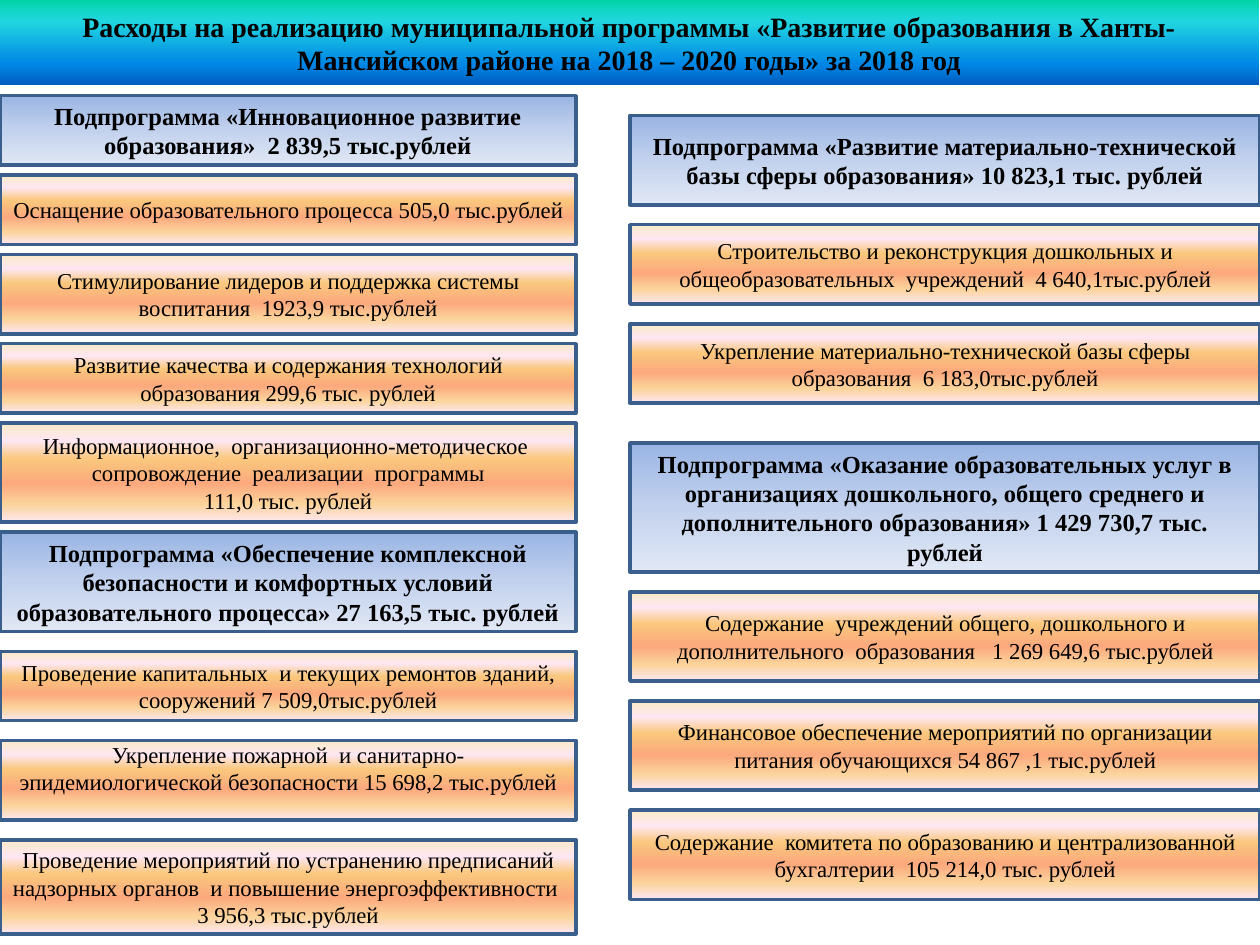
from copy import deepcopy

from pptx import Presentation
from pptx.dml.color import RGBColor
from pptx.enum.shapes import MSO_SHAPE
from pptx.enum.text import MSO_ANCHOR, PP_ALIGN
from pptx.oxml.ns import qn
from pptx.util import Cm, Pt

BLACK = RGBColor(0x00, 0x00, 0x00)
BORDER = RGBColor(0x3A, 0x5F, 0x8C)


def stops(*pairs):
    return [(place, RGBColor.from_string(color)) for place, color in pairs]


TITLE_STOPS = stops((0, "03D4A8"), (25, "21D6E0"), (75, "0087E6"), (100, "005CBF"))
PROGRAM_STOPS = stops((0, "9AB5E4"), (50, "C2D1ED"), (100, "E1E8F5"))
EXPENSE_STOPS = stops((0, "FBEAC7"), (18, "FEE7F2"), (36, "FAC77D"),
                      (61, "FBA97D"), (82, "FBD49C"), (100, "FEE7F2"))

FONT = {"name": "Times New Roman", "bold": False}
TITLE_FONT = {**FONT, "size": Pt(16), "bold": True}
PROGRAM_FONT = {**FONT, "size": Pt(14), "bold": True}
EXPENSE_FONT = {**FONT, "size": Pt(13)}

TITLE = ("Расходы на реализацию муниципальной программы «Развитие образования в "
         "Ханты-Мансийском районе на 2018 – 2020 годы» за 2018 год")

# Each program: top, gap between boxes, then (height, text) with the heading first; all in cm.
LEFT_PROGRAMS = [
    (1.93, 0.2, [
        (1.4, "Подпрограмма «Инновационное развитие образования»  2 839,5 тыс.рублей"),
        (1.4, "Оснащение образовательного процесса 505,0 тыс.рублей"),
        (1.6, "Стимулирование лидеров и поддержка системы воспитания  1923,9 тыс.рублей"),
        (1.4, "Развитие качества и содержания технологий образования 299,6 тыс. рублей"),
        (2.0, "Информационное,  организационно-методическое  сопровождение  "
              "реализации  программы\v111,0 тыс. рублей"),
    ]),
    (10.73, 0.4, [
        (2.0, "Подпрограмма «Обеспечение комплексной безопасности и комфортных условий "
              "образовательного процесса» 27 163,5 тыс. рублей"),
        (1.4, "Проведение капитальных  и текущих ремонтов зданий, "
              "сооружений 7 509,0тыс.рублей"),
        (1.6, "Укрепление пожарной  и санитарно-эпидемиологической безопасности "
              "15 698,2 тыс.рублей"),
        (1.9, "Проведение мероприятий по устранению предписаний надзорных органов  "
              "и повышение энергоэффективности  3 956,3 тыс.рублей"),
    ]),
]
RIGHT_PROGRAMS = [
    (2.33, 0.4, [
        (1.8, "Подпрограмма «Развитие материально-технической базы сферы образования» "
              "10 823,1 тыс. рублей"),
        (1.6, "Строительство и реконструкция дошкольных и общеобразовательных  "
              "учреждений  4 640,1тыс.рублей"),
        (1.6, "Укрепление материально-технической базы сферы образования  "
              "6 183,0тыс.рублей"),
    ]),
    (8.93, 0.4, [
        (2.6, "Подпрограмма «Оказание образовательных услуг в организациях дошкольного, "
              "общего среднего и дополнительного образования» 1 429 730,7 тыс. рублей"),
        (1.8, "Содержание  учреждений общего, дошкольного и дополнительного  "
              "образования   1 269 649,6 тыс.рублей"),
        (1.8, "Финансовое обеспечение мероприятий по организации питания обучающихся "
              "54 867 ,1 тыс.рублей"),
        (1.8, "Содержание  комитета по образованию и централизованной бухгалтерии  "
              "105 214,0 тыс. рублей"),
    ]),
]


def fill_gradient(shape, color_stops):
    """Fill from top to bottom with any number of colour stops."""
    fill = shape.fill
    fill.gradient()
    fill.gradient_angle = 270
    stop_list = shape._element.spPr.find(qn("a:gradFill")).find(qn("a:gsLst"))
    for _ in range(len(color_stops) - len(stop_list)):
        stop_list.append(deepcopy(stop_list[0]))
    for stop, (place, color) in zip(fill.gradient_stops, color_stops):
        stop.position = place / 100
        stop.color.rgb = color


def write_text(shape, text, font):
    frame = shape.text_frame
    frame.word_wrap = True
    frame.vertical_anchor = MSO_ANCHOR.MIDDLE
    para = frame.paragraphs[0]
    para.text = text
    para.alignment = PP_ALIGN.CENTER
    for span in para.runs:
        for name, value in font.items():
            setattr(span.font, name, value)
        span.font.color.rgb = BLACK


def place_title(page, left, top, width, height):
    title = page.shapes.title
    title.left, title.top, title.width, title.height = map(Cm, (left, top, width, height))
    fill_gradient(title, TITLE_STOPS)
    write_text(title, TITLE, TITLE_FONT)


def add_box(page, left, top, width, height, text, color_stops, font):
    box = page.shapes.add_shape(MSO_SHAPE.RECTANGLE, *map(Cm, (left, top, width, height)))
    box.shadow.inherit = False
    fill_gradient(box, color_stops)
    box.line.color.rgb = BORDER
    box.line.width = Pt(2)
    write_text(box, text, font)
    return box


def add_column(page, left, width, programs):
    """Stack each program's heading and its expenses; return the boxes by text."""
    boxes = {}
    for top, gap, rows in programs:
        for index, (height, text) in enumerate(rows):
            style = (EXPENSE_STOPS, EXPENSE_FONT) if index else (PROGRAM_STOPS, PROGRAM_FONT)
            boxes[text] = add_box(page, left, top, width, height, text, *style)
            top += height + gap
    return boxes


def main():
    deck = Presentation()
    deck.slide_width, deck.slide_height = Cm(25.4), Cm(19.05)
    page = deck.slides.add_slide(deck.slide_layouts[5])
    place_title(page, -0.02, 0, 25.4, 1.72)
    left_boxes = add_column(page, 0, 11.61, LEFT_PROGRAMS)
    add_column(page, 12.7, 12.7, RIGHT_PROGRAMS)

    fire_safety_text = LEFT_PROGRAMS[1][2][2][1]
    fire_safety = left_boxes[fire_safety_text].text_frame
    fire_safety.margin_top, fire_safety.margin_bottom = Cm(0), Cm(0.5)
    deck.save("out.pptx")


if __name__ == "__main__":
    main()
